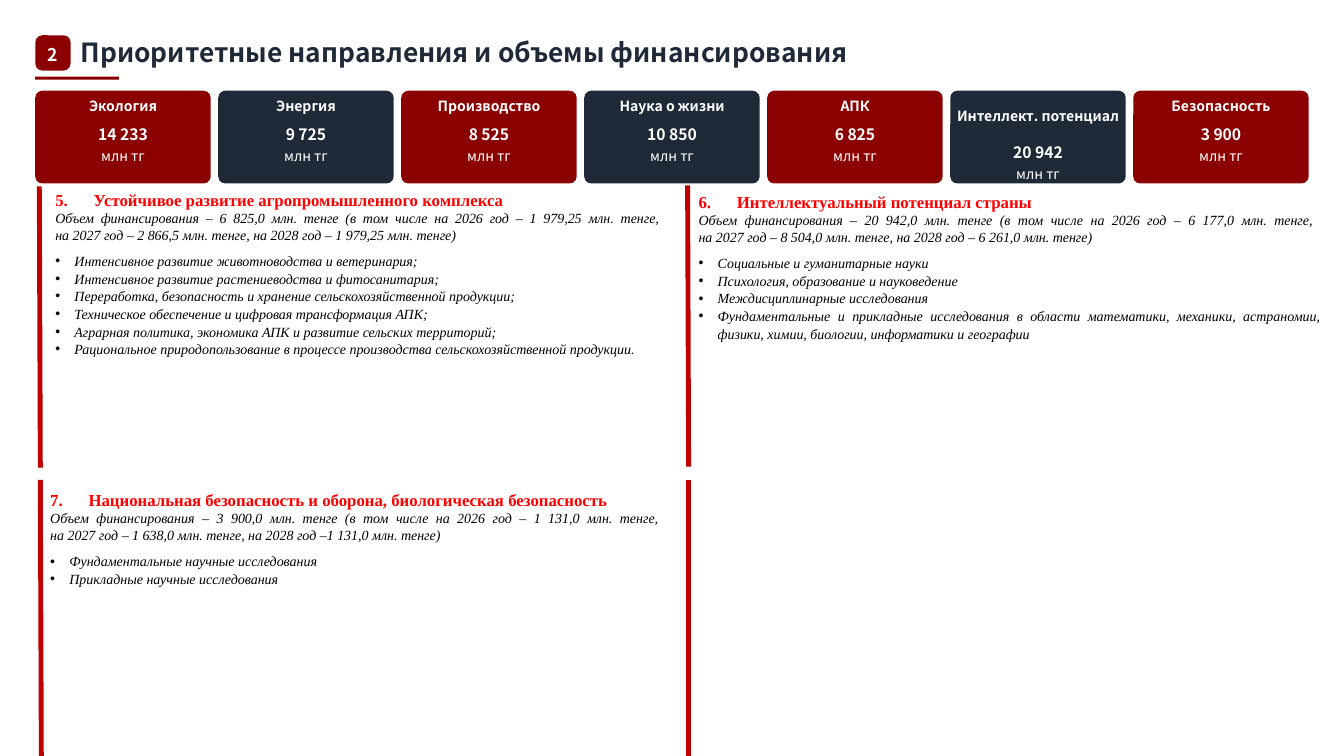
from lxml import etree
from pptx import Presentation
from pptx.dml.color import RGBColor
from pptx.enum.shapes import MSO_CONNECTOR as Connector, MSO_SHAPE as Shape
from pptx.enum.text import MSO_ANCHOR as Anchor, PP_ALIGN as Align
from pptx.oxml.ns import qn
from pptx.util import Inches, Pt

# Content
NUMBER = "2"
TITLE = "Приоритетные направления и объемы финансирования"
UNIT = "млн тг"
CARDS = [
    ("Экология", "14 233"),
    ("Энергия", "9 725"),
    ("Производство", "8 525"),
    ("Наука о жизни", "10 850"),
    ("АПК", "6 825"),
    ("Интеллект. потенциал", "20 942"),
    ("Безопасность", "3 900"),
]
TALL_CARD = "Интеллект. потенциал"  # its name takes the height of two lines
SECTIONS = [  # box, number, heading, funding, topics
    ((0.45, 1.83, 6.25, 1.77), 5, "Устойчивое развитие агропромышленного комплекса",
     "Объем финансирования – 6 825,0 млн. тенге (в том числе на 2026 год – 1 979,25 млн. тенге, \n"
     "на 2027 год – 2 866,5 млн. тенге, на 2028 год – 1 979,25 млн. тенге)",
     ["Интенсивное развитие животноводства и ветеринария;",
      "Интенсивное развитие растениеводства и фитосанитария;",
      "Переработка, безопасность и хранение сельскохозяйственной продукции;",
      "Техническое обеспечение и цифровая трансформация АПК;",
      "Аграрная политика, экономика АПК и развитие сельских территорий;",
      "Рациональное природопользование в процессе производства сельскохозяйственной продукции."]),
    ((6.83, 1.85, 6.36, 1.99), 6, "Интеллектуальный потенциал страны",
     "Объем финансирования – 20 942,0 млн. тенге (в том числе на 2026 год – 6 177,0 млн. тенге, \n"
     "на 2027 год – 8 504,0 млн. тенге, на 2028 год – 6 261,0 млн. тенге)",
     ["Социальные и гуманитарные науки",
      "Психология, образование и науковедение",
      "Междисциплинарные исследования",
      "Фундаментальные и прикладные исследования в области математики, механики, "
      "астраномии, физики, химии, биологии, информатики и географии"]),
    ((0.4, 4.81, 6.3, 1.28), 7, "Национальная безопасность и оборона, биологическая безопасность",
     "Объем финансирования – 3 900,0 млн. тенге (в том числе на 2026 год – 1 131,0 млн. тенге, \n"
     "на 2027 год – 1 638,0 млн. тенге, на 2028 год –1 131,0 млн. тенге)",
     ["Фундаментальные научные исследования",
      "Прикладные научные исследования"]),
]
RULES = [  # x1, y1, x2, y2
    (0.39, 1.85, 0.4, 4.64),
    (6.82, 1.84, 6.83, 4.63),
    (0.4, 4.76, 0.41, 7.5),
    (6.83, 4.76, 6.83, 7.5),
]

THEME = {
    "red": "8B0000", "navy": "1F2937", "white": "FFFFFF", "black": "000000",
    "heading": "FF0000", "rule": "C00000",
    "sans": "Noto Sans CJK SC", "serif": "Times New Roman",
    "title_size": 18.8, "number_size": 12.5, "amount_size": 11.2,
    "label_size": 10, "heading_size": 12, "body_size": 10, "rule_width": 3.5,
}
LEFT, CORNER = 0.35, 0.07
CARD_TOP, CARD_W, CARD_H, LAST_CARD_LEFT = 0.9, 1.74, 0.92, 11.24
CARD_PAD, NAME_H, TALL_NAME_H, AMOUNT_H, UNIT_H = 0.03, 0.17, 0.35, 0.24, 0.21

deck = Presentation()
deck.slide_width, deck.slide_height = Inches(13.33), Inches(7.5)
slide = deck.slides.add_slide(deck.slide_layouts[6])


def color(name):
    return RGBColor.from_string(THEME[name])


def add_block(left, top, width, height, fill, corner=0):
    kind = Shape.ROUNDED_RECTANGLE if corner else Shape.RECTANGLE
    block = slide.shapes.add_shape(kind, Inches(left), Inches(top), Inches(width), Inches(height))
    if corner:
        block.adjustments[0] = corner / min(width, height)
    block.shadow.inherit = False
    block.fill.solid()
    block.fill.fore_color.rgb = color(fill)
    block.line.fill.background()


def add_frame(left, top, width, height, inset=True, anchor=Anchor.TOP):
    box = slide.shapes.add_textbox(Inches(left), Inches(top), Inches(width), Inches(height))
    frame = box.text_frame
    frame.word_wrap, frame.vertical_anchor = True, anchor
    if not inset:
        frame.margin_left = frame.margin_top = frame.margin_right = frame.margin_bottom = 0
    return frame


def write(frame, text, size, ink, font="sans", bold=False, italic=False, align=Align.LEFT,
          spacing=None, after=None, indent=0, marker=None, start=None):
    paragraph = frame.paragraphs[0]
    if paragraph.runs:
        paragraph = frame.add_paragraph()
    paragraph.alignment = align
    if spacing:
        paragraph.line_spacing = spacing
    if after:
        paragraph.space_after = Pt(after)
    if marker or start:
        props = paragraph._p.get_or_add_pPr()
        props.set("marL", str(Inches(indent)))
        props.set("indent", str(-Inches(indent)))
        if marker:
            etree.SubElement(props, qn("a:buFont"), typeface="Arial")
            etree.SubElement(props, qn("a:buChar"), char=marker)
        else:
            etree.SubElement(props, qn("a:buAutoNum"), type="arabicPeriod", startAt=str(start))
    for index, line in enumerate(text.split("\n")):
        if index:
            paragraph.add_line_break()
        run = paragraph.add_run()
        run.text = line
        run.font.size, run.font.name = Pt(THEME[size]), THEME[font]
        run.font.bold, run.font.italic = bold, italic
        run.font.color.rgb = color(ink)


def label(left, top, width, height, text, size, ink, **style):
    write(add_frame(left, top, width, height, inset=False, anchor=Anchor.MIDDLE),
          text, size, ink, **style)


# Title with its number and underline
add_block(LEFT, 0.35, 0.35, 0.35, "red", CORNER)
label(0.47, 0.4, 0.19, 0.24, NUMBER, "number_size", "white", bold=True, spacing=1.2)
label(0.8, 0.36, 8.14, 0.31, TITLE, "title_size", "navy", bold=True)
add_block(LEFT, 0.76, 0.83, 0.03, "red")

# Funding cards
pitch = (LAST_CARD_LEFT - LEFT) / (len(CARDS) - 1)
for index, (name, amount) in enumerate(CARDS):
    left = LEFT + index * pitch
    add_block(left, CARD_TOP, CARD_W, CARD_H, "navy" if index % 2 else "red", CORNER)
    name_h = TALL_NAME_H if name == TALL_CARD else NAME_H
    top = CARD_TOP + CORNER
    amount_top = top + name_h + 0.04
    text_left, text_w = left + CARD_PAD, CARD_W - 2 * CARD_PAD
    label(text_left, top, text_w, name_h, name, "label_size", "white",
          bold=True, align=Align.CENTER)
    label(text_left, amount_top, text_w, AMOUNT_H, amount, "amount_size", "white",
          bold=True, align=Align.CENTER, spacing=1.3)
    label(text_left, amount_top + AMOUNT_H, text_w, UNIT_H, UNIT, "label_size", "white",
          align=Align.CENTER, spacing=1.3)

# Priority sections
for box, number, heading, funding, topics in SECTIONS:
    section = add_frame(*box)
    body = dict(size="body_size", ink="black", font="serif", italic=True, align=Align.JUSTIFY)
    write(section, heading, "heading_size", "heading", font="serif", bold=True,
          align=Align.JUSTIFY, indent=0.38, start=number)
    write(section, funding, after=6, **body)
    for topic in topics:
        write(section, topic, spacing=1.05, indent=0.19, marker="•", **body)

# Vertical rules beside the sections
for ends in RULES:
    rule = slide.shapes.add_connector(Connector.STRAIGHT, *map(Inches, ends))
    rule.line.color.rgb = color("rule")
    rule.line.width = Pt(THEME["rule_width"])
    etree.SubElement(rule._element.spPr, qn("a:effectLst"))

deck.save("out.pptx")
